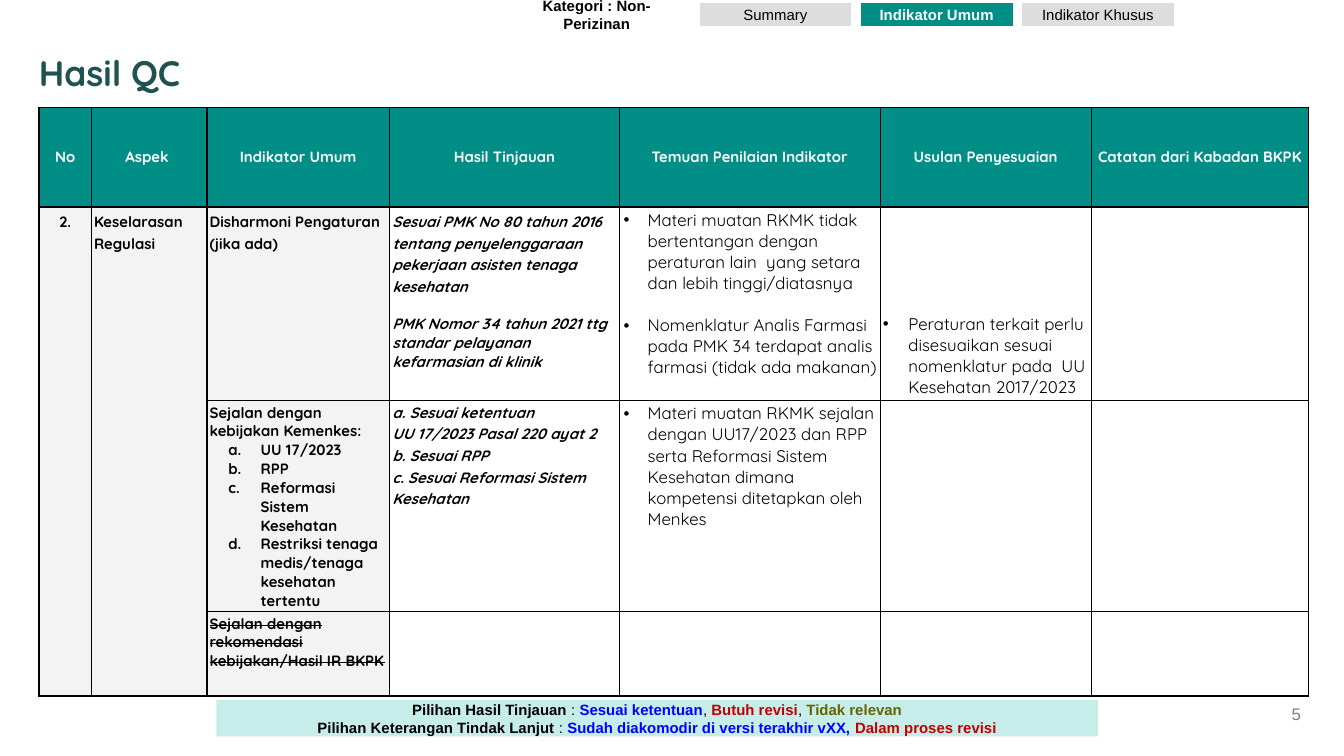
from lxml.etree import SubElement
from pptx import Presentation
from pptx.dml.color import RGBColor
from pptx.enum.shapes import MSO_SHAPE
from pptx.enum.text import MSO_ANCHOR, PP_ALIGN
from pptx.oxml import parse_xml
from pptx.oxml.ns import qn
from pptx.util import Inches, Pt

TEAL = RGBColor(0x00, 0x8E, 0x87)
DARK = RGBColor(0x21, 0x51, 0x50)
MINT = RGBColor(0xC7, 0xED, 0xEB)
SILVER = RGBColor(0xDD, 0xDD, 0xDD)
PALE = RGBColor(0xF3, 0xF3, 0xF3)
GRAY = RGBColor(0x7F, 0x7F, 0x7F)
WHITE = RGBColor(0xFF, 0xFF, 0xFF)
BLACK = RGBColor(0x00, 0x00, 0x00)
BLUE = RGBColor(0x00, 0x00, 0xFF)
RED = RGBColor(0xC0, 0x00, 0x00)
OLIVE = RGBColor(0x64, 0x64, 0x00)

SPACE = 'xmlns:a="http://schemas.openxmlformats.org/drawingml/2006/main"'
HEADS = ["No", "Aspek ", "Indikator Umum", "Hasil Tinjauan", "Temuan Penilaian Indikator",
         "Usulan Penyesuaian", "Catatan dari Kabadan BKPK"]
COLS = [0.39, 0.86, 1.36, 1.71, 1.94, 1.57, 1.62]
ROWS = [0.74, 1.44, 1.57, 0.63]
TABS = [("Summary", SILVER, BLACK, False), ("Indikator Umum", TEAL, WHITE, True),
        ("Indikator Khusus", SILVER, BLACK, False)]

WIDE = {"bold": True, "lead": 1.15}
BOLD = {"bold": True}
SLANT = {"bold": True, "italic": True}
LOOSE = {**SLANT, "lead": 1.15}
POINT = {"size": 9, "mark": "•", "indent": (0.19, -0.18)}
ITEM = {"bold": True, "mark": "a.", "indent": (0.38, -0.24)}
BODY = {
    (1, 0): [("2.", {"bold": True, "align": PP_ALIGN.CENTER})],
    (1, 1): [("Keselarasan Regulasi", WIDE)],
    (1, 2): [("Disharmoni Pengaturan (jika ada)", WIDE)],
    (1, 3): [("Sesuai PMK No 80 tahun 2016 tentang penyelenggaraan pekerjaan asisten "
              "tenaga kesehatan", LOOSE),
             ("PMK Nomor 34 tahun 2021 ttg standar pelayanan kefarmasian di klinik",
              {**SLANT, "before": 10})],
    (1, 4): [("Materi muatan RKMK tidak bertentangan dengan peraturan lain  yang setara "
              "dan lebih tinggi/diatasnya", POINT),
             ("Nomenklatur Analis Farmasi pada PMK 34 terdapat analis farmasi "
              "(tidak ada makanan)", {**POINT, "before": 11.25})],
    (1, 5): [("Peraturan terkait perlu disesuaikan sesuai nomenklatur pada  UU "
              "Kesehatan 2017/2023", {**POINT, "indent": (0.19, -0.19)})],
    (2, 2): [("Sejalan dengan kebijakan Kemenkes:", BOLD), ("UU 17/2023", ITEM), ("RPP", ITEM),
             ("Reformasi Sistem Kesehatan", ITEM),
             ("Restriksi tenaga medis/tenaga kesehatan tertentu", ITEM)],
    (2, 3): [("a. Sesuai ketentuan", SLANT), ("UU 17/2023 Pasal 220 ayat 2", LOOSE),
             ("b. Sesuai RPP", LOOSE), ("c. Sesuai Reformasi Sistem Kesehatan", LOOSE)],
    (2, 4): [("Materi muatan RKMK sejalan dengan UU17/2023 dan RPP serta Reformasi Sistem "
              "Kesehatan dimana kompetensi ditetapkan oleh Menkes", POINT)],
    (3, 2): [("Sejalan dengan rekomendasi kebijakan/Hasil IR BKPK", {**BOLD, "strike": True})],
}
NOTES = [
    [("Pilihan Hasil Tinjauan ", BLACK, True), (": ", BLACK, False),
     ("Sesuai ketentuan", BLUE, True), (", ", BLACK, False), ("Butuh revisi", RED, True),
     (", ", BLACK, False), ("Tidak relevan", OLIVE, True)],
    [("Pilihan Keterangan Tindak Lanjut", BLACK, True), (" : ", BLACK, False),
     ("Sudah diakomodir di versi terakhir vXX, ", BLUE, True),
     ("Dalam proses revisi", RED, True)],
]


class Deck:
    def __init__(self, slide):
        self.slide = slide
        self.body = "Quicksand"
        self.label = "Arial"

    def font(self, run, face, size=8, color=BLACK, bold=False, italic=False, strike=False):
        font = run.font
        font.name, font.size, font.bold, font.italic = face, Pt(size), bold, italic
        font.color.rgb = color
        if strike:
            run._r.get_or_add_rPr().set("strike", "sngStrike")

    def para(self, para, text, face, align=None, lead=None, before=None, indent=None,
             mark=None, **style):
        para.text = text
        props = para._p.get_or_add_pPr()
        if indent:
            props.set("marL", str(Inches(indent[0])))
            props.set("indent", str(Inches(indent[1])))
        if mark:
            SubElement(SubElement(props, qn("a:buClr")), qn("a:srgbClr")).set("val", str(BLACK))
            SubElement(props, qn("a:buFont")).set("typeface", self.label if mark == "•" else self.body)
            if mark == "•":
                SubElement(props, qn("a:buChar")).set("char", mark)
            else:
                SubElement(props, qn("a:buAutoNum")).set("type", "alphaLcPeriod")
        para.alignment = align
        if lead:
            para.line_spacing = lead
        if before:
            para.space_before = Pt(before)
        for run in para.runs:
            self.font(run, face, **style)

    def frame(self, shape, inset, anchor):
        frame = shape.text_frame
        frame.word_wrap = True
        frame.vertical_anchor = anchor
        frame.margin_left = frame.margin_right = Inches(0.07)
        frame.margin_top = frame.margin_bottom = Inches(inset)
        return frame

    def text(self, area, text, face, inset=0.07, anchor=MSO_ANCHOR.MIDDLE, **style):
        box = self.slide.shapes.add_textbox(*map(Inches, area))
        self.para(self.frame(box, inset, anchor).paragraphs[0], text, face, **style)

    def rect(self, area, fill, line=None):
        rect = self.slide.shapes.add_shape(MSO_SHAPE.RECTANGLE, *map(Inches, area))
        rect.shadow.inherit = False
        rect.fill.solid()
        rect.fill.fore_color.rgb = fill
        if line is None:
            rect.line.fill.background()
        else:
            rect.line.color.rgb = line
            rect.line.width = Pt(0.75)
        return self.frame(rect, 0.07, MSO_ANCHOR.MIDDLE)

    def tab(self, area, text, fill, color, bold):
        frame = self.rect(area, fill, WHITE)
        self.para(frame.paragraphs[0], text, self.label, PP_ALIGN.CENTER, color=color, bold=bold)

    def note(self, area, fill, lines):
        frame = self.rect(area, fill)
        for at, line in enumerate(lines):
            para = frame.add_paragraph() if at else frame.paragraphs[0]
            para.alignment = PP_ALIGN.CENTER
            for text, color, bold in line:
                run = para.add_run()
                run.text = text
                self.font(run, self.label, color=color, bold=bold)

    def cell(self, cell, fill, inset, anchor, paras):
        cell.margin_left = cell.margin_right = Inches(inset)
        cell.margin_top = cell.margin_bottom = Inches(inset)
        cell.vertical_anchor = anchor
        cell.fill.solid()
        cell.fill.fore_color.rgb = fill
        props = cell._tc.get_or_add_tcPr()
        for at, side in enumerate("LRTB"):
            props.insert(at, parse_xml(
                f'<a:ln{side} {SPACE} w="{Pt(0.75)}"><a:solidFill>'
                f'<a:srgbClr val="{BLACK}"/></a:solidFill></a:ln{side}>'))
        frame = cell.text_frame
        for at, (text, style) in enumerate(paras):
            para = frame.add_paragraph() if at else frame.paragraphs[0]
            self.para(para, text, self.body, **style)

    def table(self, left, top, cols, rows):
        table = self.slide.shapes.add_table(
            len(rows), len(cols), Inches(left), Inches(top),
            Inches(sum(cols)), Inches(sum(rows))).table
        for col, width in zip(table.columns, cols):
            col.width = Inches(width)
        for row, height in zip(table.rows, rows):
            row.height = Inches(height)
        head = {"bold": True, "color": WHITE, "align": PP_ALIGN.CENTER}
        for y in range(len(rows)):
            for x in range(len(cols)):
                cell = table.cell(y, x)
                if y == 0:
                    self.cell(cell, TEAL, 0.04, MSO_ANCHOR.MIDDLE, [(HEADS[x], head)])
                else:
                    anchor = MSO_ANCHOR.BOTTOM if (y, x) == (1, 5) else MSO_ANCHOR.TOP
                    self.cell(cell, PALE if x < 3 else WHITE, 0.04 if x == 0 else 0.02,
                              anchor, BODY.get((y, x), []))
        for x in range(2):
            table.cell(1, x).merge(table.cell(len(rows) - 1, x))


def main():
    show = Presentation()
    show.slide_width = Inches(10)
    show.slide_height = show.slide_width * 9 // 16
    deck = Deck(show.slides.add_slide(show.slide_layouts[6]))
    deck.text((0.22, 0.14, 9.57, 0.6), "Hasil QC", deck.body, 0.04, MSO_ANCHOR.BOTTOM,
              lead=0.9, size=19, color=DARK, bold=True)
    deck.text((7.5, 5.16, 2.25, 0.3), "5", deck.label, 0.04,
              align=PP_ALIGN.RIGHT, size=9, color=GRAY)
    deck.table(0.29, 0.8, COLS, ROWS)
    deck.note((1.61, 5.21, 6.56, 0.27), MINT, NOTES)
    deck.text((3.75, 0.02, 1.38, 0.18), "Kategori : Non-Perizinan", deck.label,
              align=PP_ALIGN.CENTER, bold=True)
    for at, tab in enumerate(TABS):
        deck.tab((5.2 + 1.2 * at, 0.02, 1.14, 0.18), *tab)
    show.save("out.pptx")


if __name__ == "__main__":
    main()
